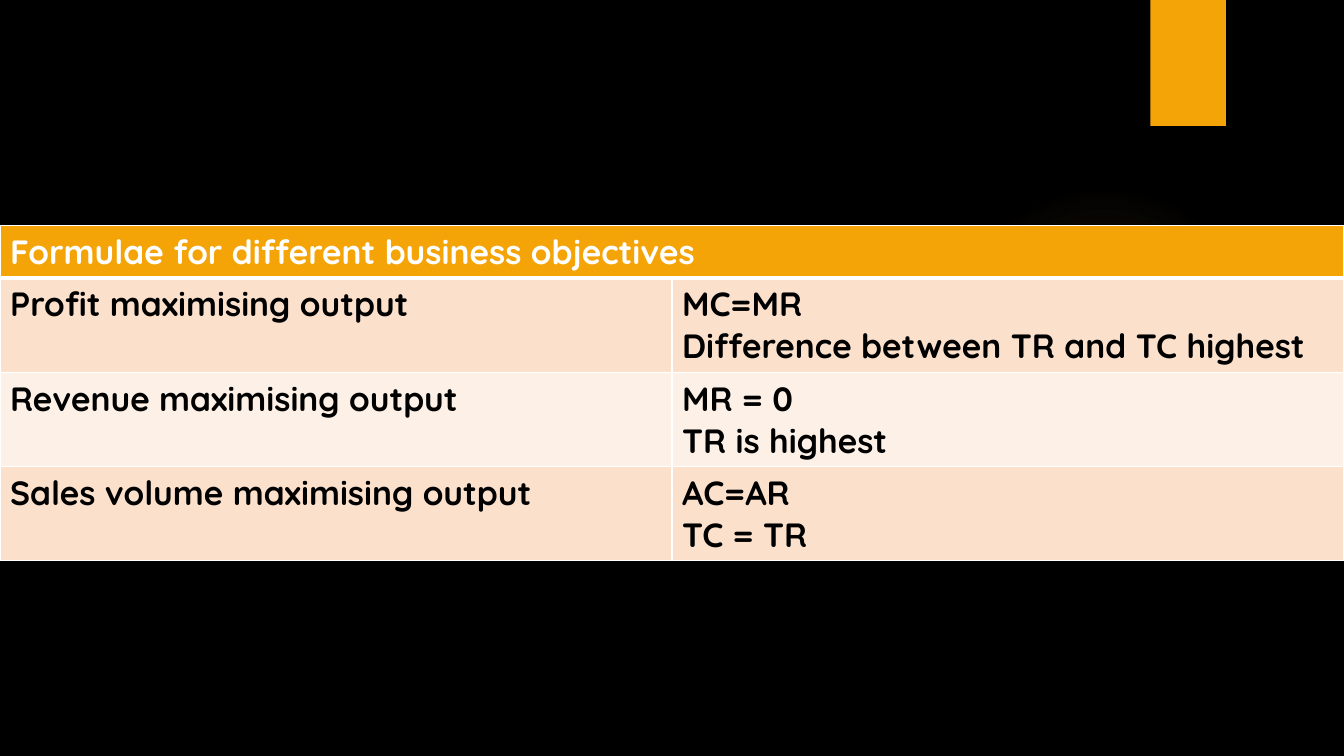
import pptx
import pptx.util
import pptx.dml.color
import pptx.enum.shapes
import pptx.oxml
import pptx.oxml.ns

Inches = pptx.util.Inches
RGBColor = pptx.dml.color.RGBColor
SHAPES = pptx.enum.shapes.MSO_SHAPE

BLACK = RGBColor(0x00, 0x00, 0x00)
WHITE = RGBColor(0xFF, 0xFF, 0xFF)
ORANGE = RGBColor(0xF5, 0xA4, 0x08)
GLOW = RGBColor(0xFA, 0xC9, 0x6A)
PEACH = RGBColor(0xFB, 0xE0, 0xCC)
CREAM = RGBColor(0xFD, 0xF0, 0xE7)
NAMESPACE = pptx.oxml.ns.nsdecls("a")


def write_cell(cell, lines, color, fill, bottom_width):
    cell.fill.solid()
    cell.fill.fore_color.rgb = fill
    for number, line in enumerate(lines):
        frame = cell.text_frame
        paragraph = frame.paragraphs[0] if number == 0 else frame.add_paragraph()
        run = paragraph.add_run()
        run.text = line
        run.font.name = "Quicksand"
        run.font.size = pptx.util.Pt(24)
        run.font.bold = True
        run.font.color.rgb = color
    properties = cell._tc.get_or_add_tcPr()
    for position, side in enumerate("LRTB"):
        width = pptx.util.Pt(bottom_width if side == "B" else 1)
        properties.insert(position, pptx.oxml.parse_xml(
            f'<a:ln{side} {NAMESPACE} w="{width}"><a:solidFill>'
            f'<a:srgbClr val="{WHITE}"/></a:solidFill></a:ln{side}>'))


presentation = pptx.Presentation()
presentation.slide_width = Inches(13.33)
presentation.slide_height = Inches(7.5)
slide = presentation.slides.add_slide(presentation.slide_layouts[6])
slide.background.fill.solid()
slide.background.fill.fore_color.rgb = BLACK

glow = slide.shapes.add_shape(
    SHAPES.OVAL, Inches(9.41), Inches(1.83), Inches(3.08), Inches(3.08))
glow.shadow.inherit = False
glow.line.fill.background()
stops = "".join(
    f'<a:gs pos="{position * 1000}"><a:srgbClr val="{GLOW}">'
    f'<a:alpha val="{opacity * 1000}"/></a:srgbClr></a:gs>'
    for position, opacity in [(0, 7), (36, 6), (69, 0)])
geometry = glow.element.spPr.find(pptx.oxml.ns.qn("a:prstGeom"))
geometry.addnext(pptx.oxml.parse_xml(
    f'<a:gradFill {NAMESPACE}><a:gsLst>{stops}</a:gsLst><a:path path="circle">'
    '<a:fillToRect l="50000" t="50000" r="50000" b="50000"/></a:path></a:gradFill>'))

ribbon = slide.shapes.add_shape(
    SHAPES.RECTANGLE, Inches(11.41), 0, Inches(0.75), Inches(1.25))
ribbon.shadow.inherit = False
ribbon.fill.solid()
ribbon.fill.fore_color.rgb = ORANGE
ribbon.line.fill.background()

objectives = [
    ("Profit maximising output", ["MC=MR", "Difference between TR and TC highest"]),
    ("Revenue maximising output", ["MR = 0", "TR is highest"]),
    ("Sales volume maximising output", ["AC=AR", "TC = TR"]),
]
formulae = slide.shapes.add_table(
    len(objectives) + 1, 2, 0, Inches(2.24), Inches(13.33), Inches(3.32)).table
formulae.rows[0].height = Inches(0.52)
formulae.cell(0, 0).merge(formulae.cell(0, 1))
write_cell(formulae.cell(0, 0), ["Formulae for different business objectives"],
           WHITE, ORANGE, 3)
write_cell(formulae.cell(0, 1), [], WHITE, ORANGE, 3)
for row, (objective, conditions) in enumerate(objectives, start=1):
    formulae.rows[row].height = Inches(0.93)
    band = PEACH if row % 2 else CREAM
    write_cell(formulae.cell(row, 0), [objective], BLACK, band, 1)
    write_cell(formulae.cell(row, 1), conditions, BLACK, band, 1)

presentation.save("out.pptx")
